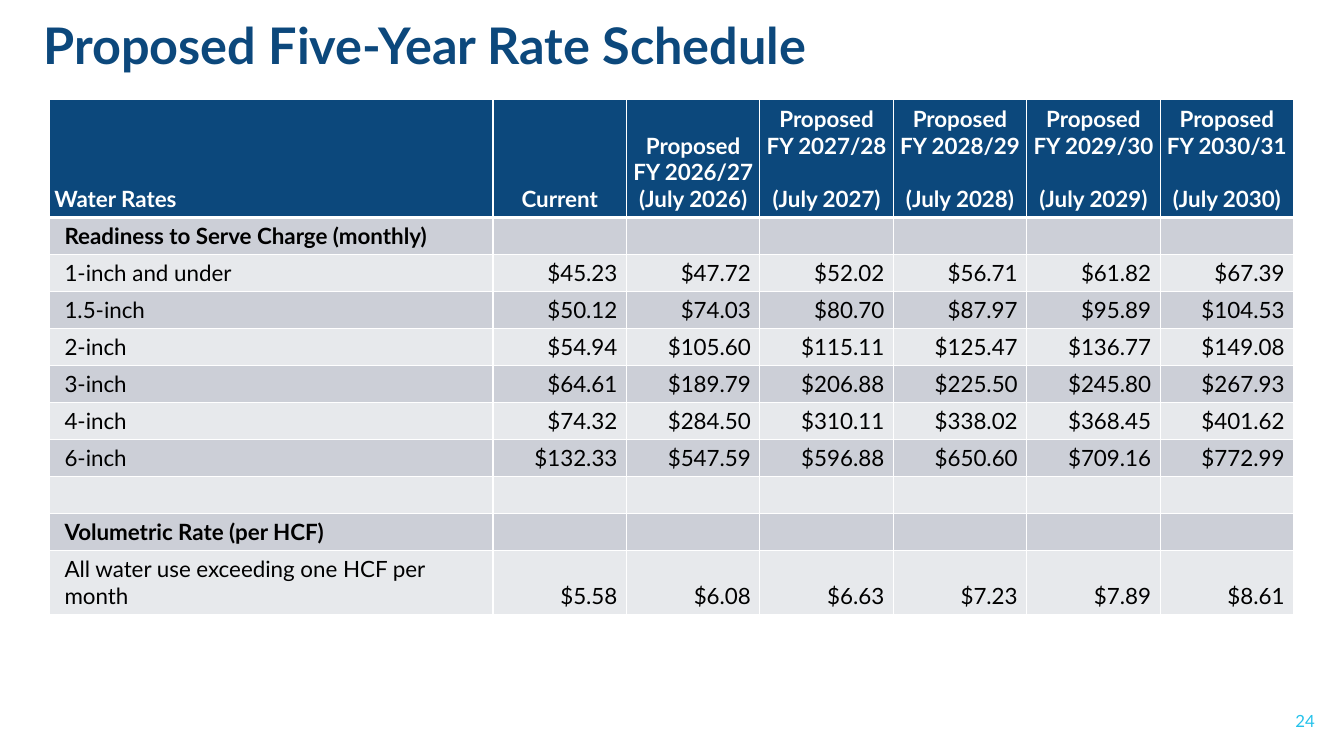
from dataclasses import dataclass

from lxml import etree
from pptx import Presentation
from pptx import util as u
from pptx.dml.color import RGBColor
from pptx.enum import text
from pptx.oxml import ns

FONT = "Lato"
NAVY, CYAN, WHITE, BLACK = "0C487C", "24C2EB", "FFFFFF", "000000"
BANDS = ("CCCFD7", "E7E9EC")
TABLE_WIDTH, LABEL_WIDTH = 12.34, 4.4
HEADER_HEIGHT, ROW_HEIGHT = 1.16, 0.36
TABLE_SIZE = 16
LEFT, CENTER, RIGHT = text.PP_ALIGN.LEFT, text.PP_ALIGN.CENTER, text.PP_ALIGN.RIGHT


@dataclass
class Rate:
    label: str = ""
    prices: tuple[str, ...] = ("",) * 6
    bold: bool = False


@dataclass
class Heading:
    lines: tuple[str, ...]
    gap: float = 0  # points above the last line


HEADINGS = [Heading(("Water Rates",)), Heading(("Current",))] + [
    Heading(("Proposed", f"FY {year}/{year - 1999}", f"(July {year})"),
            gap=0 if year == 2026 else 19.2)
    for year in range(2026, 2031)
]

RATES = [
    Rate("Readiness to Serve Charge (monthly)", bold=True),
    Rate("1-inch and under", ("$45.23", "$47.72", "$52.02", "$56.71", "$61.82", "$67.39")),
    Rate("1.5-inch", ("$50.12", "$74.03", "$80.70", "$87.97", "$95.89", "$104.53")),
    Rate("2-inch", ("$54.94", "$105.60", "$115.11", "$125.47", "$136.77", "$149.08")),
    Rate("3-inch", ("$64.61", "$189.79", "$206.88", "$225.50", "$245.80", "$267.93")),
    Rate("4-inch", ("$74.32", "$284.50", "$310.11", "$338.02", "$368.45", "$401.62")),
    Rate("6-inch", ("$132.33", "$547.59", "$596.88", "$650.60", "$709.16", "$772.99")),
    Rate(),
    Rate("Volumetric Rate (per HCF)", bold=True),
    Rate("All water use exceeding one HCF per month",
         ("$5.58", "$6.08", "$6.63", "$7.23", "$7.89", "$8.61")),
]


def color(value: str) -> RGBColor:
    return RGBColor.from_string(value)


def format_text(frame, size: float, ink: str, bold: bool, align) -> None:
    for para in frame.paragraphs:
        para.alignment = align
        for span in para.runs:
            span.font.name = FONT
            span.font.size = u.Pt(size)
            span.font.bold = bold
            span.font.color.rgb = color(ink)
        if not para.runs:
            # An empty cell keeps the table's text height
            etree.SubElement(para._p, ns.qn("a:endParaRPr"), sz=str(size * 100))


def add_borders(cell, top: float, bottom: float) -> None:
    properties = cell._tc.get_or_add_tcPr()
    for side, width in (("L", 1), ("R", 1), ("T", top), ("B", bottom)):
        line = etree.SubElement(properties, ns.qn(f"a:ln{side}"), w=str(u.Pt(width)))
        fill = etree.SubElement(line, ns.qn("a:solidFill"))
        etree.SubElement(fill, ns.qn("a:srgbClr"), val=WHITE)


def fill_cell(cell, words: str, fill: str, ink: str, bold: bool, align,
              left: float = 0.05, right: float = 0.05,
              top_line: float = 1, bottom_line: float = 1) -> None:
    add_borders(cell, top_line, bottom_line)
    cell.fill.solid()
    cell.fill.fore_color.rgb = color(fill)
    cell.margin_left, cell.margin_right = u.Inches(left), u.Inches(right)
    cell.margin_top = cell.margin_bottom = u.Inches(0.05)
    cell.vertical_anchor = text.MSO_ANCHOR.BOTTOM
    cell.text_frame.text = words
    format_text(cell.text_frame, TABLE_SIZE, ink, bold, align)


def add_title(page, words: str) -> None:
    title = page.shapes.title
    title.left, title.top = u.Inches(0.33), u.Inches(0.15)
    title.width, title.height = u.Inches(12.8), u.Inches(0.65)
    frame = title.text_frame
    frame.text = words
    frame.auto_size = text.MSO_AUTO_SIZE.NONE
    frame.vertical_anchor = text.MSO_ANCHOR.BOTTOM
    frame.paragraphs[0].line_spacing = 0.9
    format_text(frame, 36, NAVY, True, LEFT)


def add_page_number(page, number: str) -> None:
    box = page.shapes.add_textbox(u.Inches(10.14), u.Inches(6.95), u.Inches(3), u.Inches(0.4))
    frame = box.text_frame
    frame.word_wrap = True
    frame.vertical_anchor = text.MSO_ANCHOR.MIDDLE
    frame.text = number
    format_text(frame, 12, CYAN, False, RIGHT)


def add_rate_table(page) -> None:
    height = HEADER_HEIGHT + ROW_HEIGHT * len(RATES)
    table = page.shapes.add_table(
        len(RATES) + 1, len(HEADINGS), u.Inches(0.49), u.Inches(0.99),
        u.Inches(TABLE_WIDTH), u.Inches(height)).table
    price_width = (TABLE_WIDTH - LABEL_WIDTH) / (len(HEADINGS) - 1)
    for index, column in enumerate(table.columns):
        column.width = u.Inches(price_width if index else LABEL_WIDTH)
    for index, row in enumerate(table.rows):
        row.height = u.Inches(ROW_HEIGHT if index else HEADER_HEIGHT)

    # Header row
    for index, heading in enumerate(HEADINGS):
        cell = table.cell(0, index)
        fill_cell(cell, "\n".join(heading.lines), NAVY, WHITE, True,
                  CENTER if index else LEFT, bottom_line=3)
        if heading.gap:
            cell.text_frame.paragraphs[-1].space_before = u.Pt(heading.gap)

    # Rate rows
    for index, rate in enumerate(RATES):
        band = BANDS[index % 2]
        top_line = 1 if index else 3
        fill_cell(table.cell(index + 1, 0), rate.label, band, BLACK, rate.bold, LEFT,
                  left=0.15, top_line=top_line)
        for column, price in enumerate(rate.prices, start=1):
            fill_cell(table.cell(index + 1, column), price, band, BLACK, False, RIGHT,
                      right=0.09, top_line=top_line)


def main() -> None:
    deck = Presentation()
    deck.slide_width, deck.slide_height = u.Inches(13.33), u.Inches(7.5)
    page = deck.slides.add_slide(deck.slide_layouts[5])
    add_title(page, "Proposed Five-Year Rate Schedule")
    add_page_number(page, "24")
    add_rate_table(page)
    deck.save("out.pptx")


if __name__ == "__main__":
    main()
